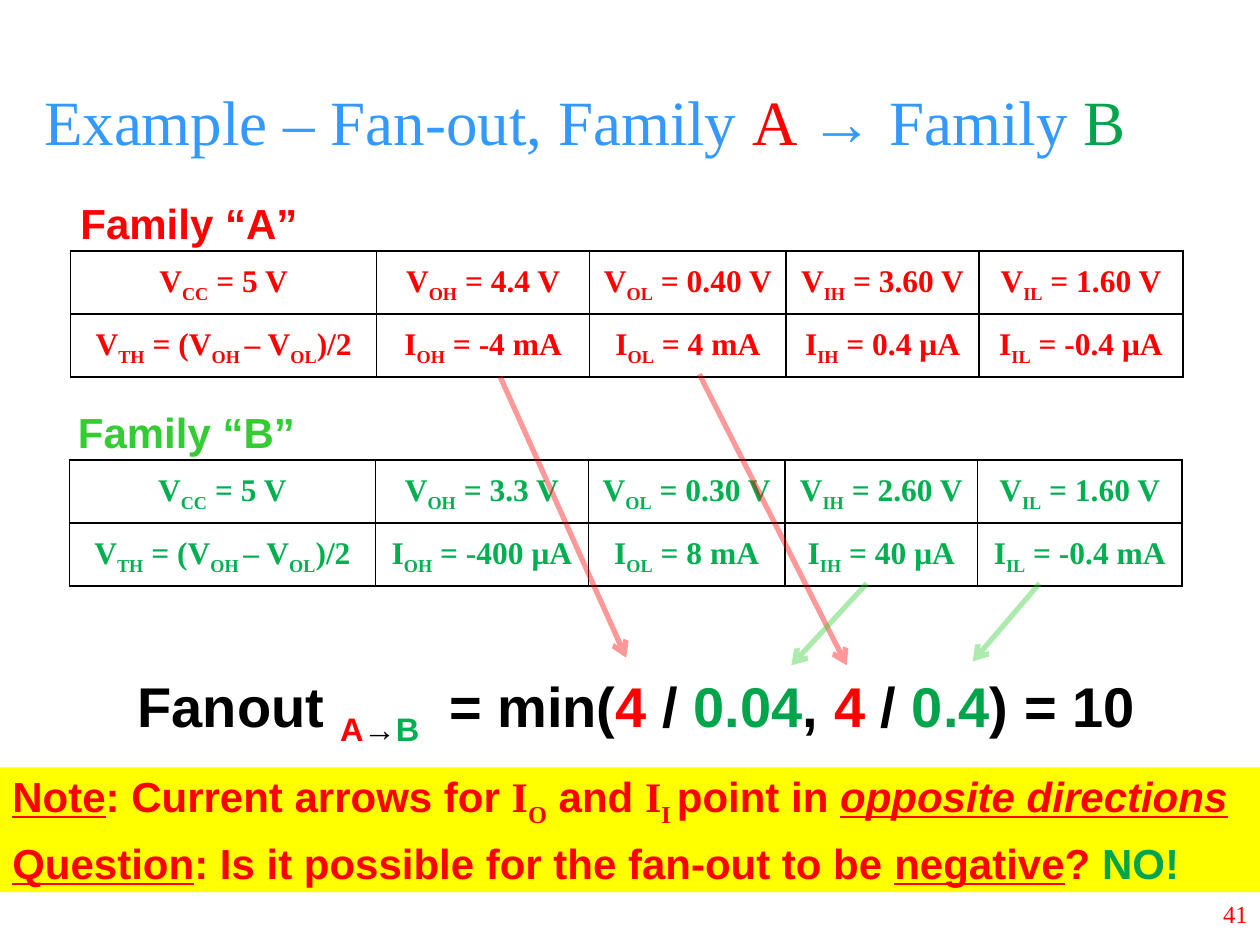
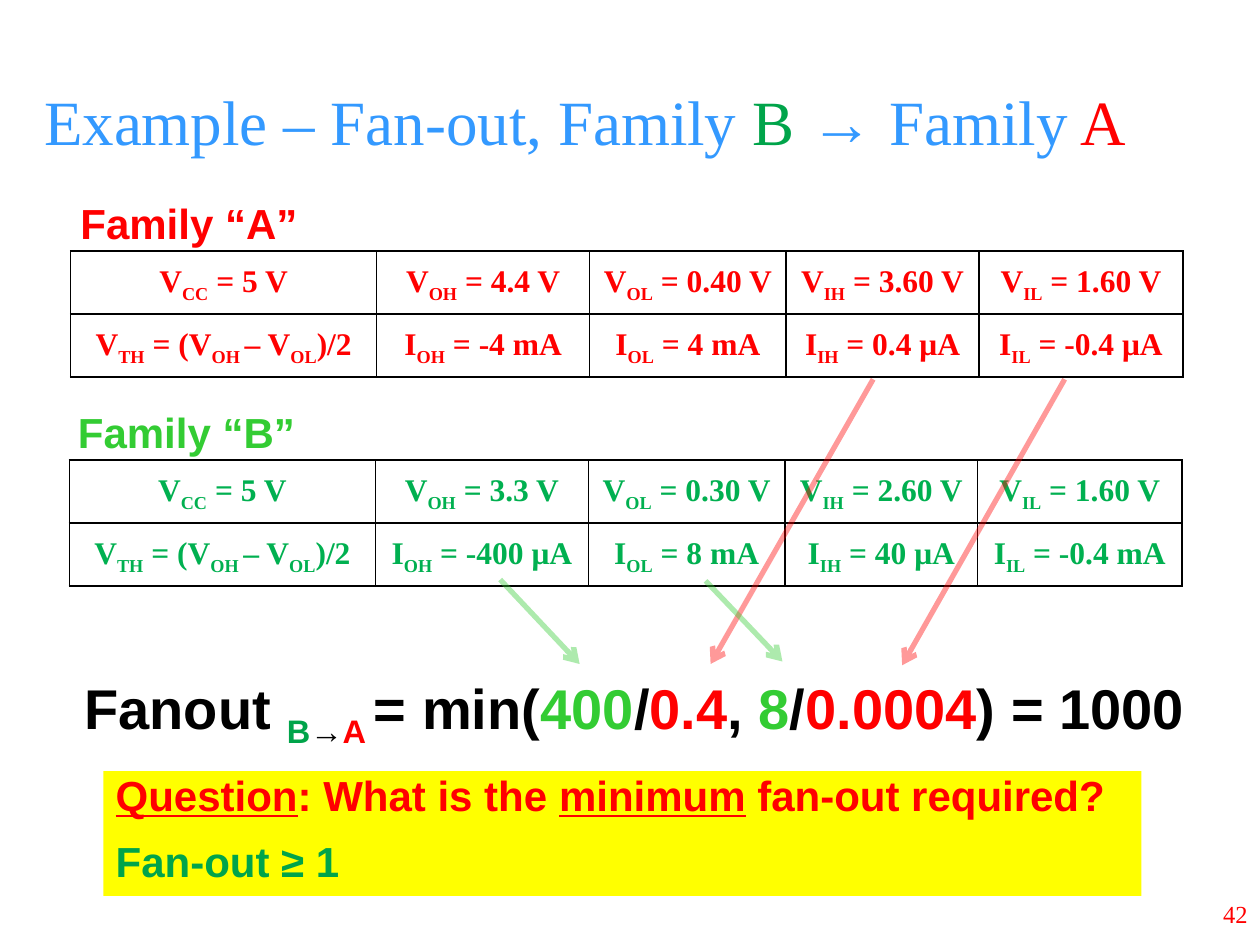
"""Build two slides on the fan-out between logic families A and B."""
from lxml import etree
from pptx import Presentation
from pptx import util as u
from pptx.dml import color
from pptx.enum import shapes, text
from pptx.oxml import ns

COLORS = {
    "title": "3399FF", "red": "FF0000", "green": "00A44A", "lime": "33CC33",
    "leaf": "00B050", "black": "000000", "yellow": "FFFF00",
}
SERIF, SANS = "Times New Roman", "Arial"
TITLE_ONLY = 5
COLUMN_WIDTHS = [2.43, 1.69, 1.56, 1.53, 1.62]
ROW_HEIGHT = 0.5
THRESHOLD = "V_TH_ = (V_OH _– V_OL_)/2"
FAMILY_A = [
    ["V_CC_ = 5 V", "V_OH_ = 4.4 V", "V_OL_ = 0.40 V", "V_IH_ = 3.60 V", "V_IL_ = 1.60 V"],
    [THRESHOLD, "I_OH_ = -4 mA", "I_OL_ = 4 mA", "I_IH_ = 0.4 μA", "I_IL_ = -0.4 μA"],
]
FAMILY_B = [
    ["V_CC_ = 5 V", "V_OH_ = 3.3 V", "V_OL_ = 0.30 V", "V_IH_ = 2.60 V", "V_IL_ = 1.60 V"],
    [THRESHOLD, "I_OH_ = -400 μA", "I_OL_ = 8 mA", "I_IH_ = 40 μA", "I_IL_ = -0.4 mA"],
]
RED, GREEN, LIME, LEAF = ({"ink": name} for name in ("red", "green", "lime", "leaf"))
UNDERLINED, SYMBOL = {"underline": True}, {"font": SERIF}


def rgb(name):
    """Return the named colour."""
    return color.RGBColor.from_string(COLORS[name])


def box(left, top, width, height):
    """Return a position and size in inches."""
    return [u.Inches(value) for value in (left, top, width, height)]


def add_child(parent, tag, **attributes):
    """Append a drawing element and return it."""
    return etree.SubElement(parent, ns.qn(tag), attributes)


def write_run(paragraph, content, font=SANS, size=24, ink="black", bold=True,
              italic=False, underline=False, tracking=0):
    """Add formatted text, where underscores enclose subscripts."""
    for index, piece in enumerate(content.split("_")):
        if not piece:
            continue
        run = paragraph.add_run()
        run.text = piece
        run.font.name, run.font.size = font, u.Pt(size)
        run.font.bold, run.font.italic, run.font.underline = bold, italic, underline
        run.font.color.rgb = rgb(ink)
        properties = run.font._element
        if index % 2:
            properties.set("baseline", "-25000")
        if tracking:
            properties.set("spc", str(tracking * 100))


def write_line(paragraph, parts, align=text.PP_ALIGN.LEFT, spacing=0.85, before=0,
               after=0, **style):
    """Fill a paragraph from strings and (string, format) pairs."""
    paragraph.alignment = align
    paragraph.line_spacing = spacing
    paragraph.space_before, paragraph.space_after = u.Pt(before), u.Pt(after)
    for part in parts:
        content, changes = (part, {}) if isinstance(part, str) else part
        write_run(paragraph, content, **{**style, **changes})


def add_label(slide, place, parts, **style):
    """Add a wrapped text box of one line."""
    frame = slide.shapes.add_textbox(*box(*place)).text_frame
    frame.word_wrap = True
    frame.auto_size = text.MSO_AUTO_SIZE.SHAPE_TO_FIT_TEXT
    write_line(frame.paragraphs[0], parts, **style)


def add_title(slide, parts):
    """Place and fill the title."""
    title = slide.shapes.title
    title.left, title.top, title.width, title.height = box(0, 0.33, 10, 1.25)
    frame = title.text_frame
    frame.auto_size = text.MSO_AUTO_SIZE.NONE
    frame.vertical_anchor = text.MSO_ANCHOR.MIDDLE
    frame.margin_left = u.Inches(0.35)
    write_line(frame.paragraphs[0], parts, spacing=1, font=SERIF, size=36,
               ink="title", bold=False)


def add_page_number(slide, number):
    """Write the page number in the lower right corner."""
    frame = slide.shapes.add_textbox(*box(7.92, 7, 2.08, 0.5)).text_frame
    frame.word_wrap = True
    frame.vertical_anchor = text.MSO_ANCHOR.MIDDLE
    write_line(frame.paragraphs[0], [str(number)], align=text.PP_ALIGN.RIGHT, spacing=1,
               font=SERIF, size=14, ink="red", bold=False)


def add_borders(cell):
    """Draw a thin black line on each side of a cell."""
    properties = cell._tc.get_or_add_tcPr()
    for index, side in enumerate("LRTB"):
        border = add_child(properties, f"a:ln{side}", w=str(u.Pt(1)))
        add_child(add_child(border, "a:solidFill"), "a:srgbClr", val=COLORS["black"])
        properties.insert(index, border)


def add_ratings(slide, left, top, ratings, ink):
    """Add the table of a family's voltages and currents."""
    place = box(left, top, sum(COLUMN_WIDTHS), ROW_HEIGHT * len(ratings))
    table = slide.shapes.add_table(len(ratings), len(COLUMN_WIDTHS), *place).table
    table.first_row = table.horz_banding = False
    for column, width in zip(table.columns, COLUMN_WIDTHS):
        column.width = u.Inches(width)
    for row, values in zip(table.rows, ratings):
        row.height = u.Inches(ROW_HEIGHT)
        for cell, value in zip(row.cells, values):
            cell.fill.background()
            cell.vertical_anchor = text.MSO_ANCHOR.MIDDLE
            cell.margin_left = cell.margin_right = u.Inches(0.07)
            cell.margin_top = cell.margin_bottom = 0
            write_line(cell.text_frame.paragraphs[0], [value], align=text.PP_ALIGN.CENTER,
                       before=4, after=4, font=SERIF, size=18, ink=ink)
            add_borders(cell)


def add_arrow(slide, ink, start, end):
    """Draw a translucent arrow from a rating to its place in the formula."""
    arrow = slide.shapes.add_connector(
        shapes.MSO_CONNECTOR.STRAIGHT, *[u.Inches(value) for value in start + end])
    arrow.line.color.rgb = rgb(ink)
    arrow.line.width = u.Pt(3)
    add_child(arrow._element.xpath(".//a:srgbClr")[0], "a:alpha", val="40000")
    add_child(arrow.line._get_or_add_ln(), "a:tailEnd", type="arrow")
    add_child(arrow._element.spPr, "a:effectLst")


def add_note(slide, place, lines):
    """Add the yellow band with its remarks."""
    band = slide.shapes.add_shape(shapes.MSO_SHAPE.RECTANGLE, *box(*place))
    band.shadow.inherit = False
    band.fill.solid()
    band.fill.fore_color.rgb = rgb("yellow")
    band.line.fill.background()
    frame = band.text_frame
    frame.word_wrap = True
    frame.vertical_anchor = text.MSO_ANCHOR.TOP
    for index, parts in enumerate(lines):
        paragraph = frame.add_paragraph() if index else frame.paragraphs[0]
        write_line(paragraph, parts, before=13 if index else 0, ink="red")


def add_example(deck, number, title, formula_place, formula, arrows, note_place, note):
    """Add a slide that works out the fan-out in one direction."""
    slide = deck.slides.add_slide(deck.slide_layouts[TITLE_ONLY])
    add_title(slide, title)
    add_page_number(slide, number)
    add_ratings(slide, 0.56, 1.99, FAMILY_A, "red")
    add_ratings(slide, 0.55, 3.65, FAMILY_B, "leaf")
    add_label(slide, (0.54, 1.58, 2.84, 0.44), ["Family “A”"], ink="red")
    add_label(slide, (0.52, 3.24, 2.84, 0.44), ["Family “B”"], ink="lime")
    add_label(slide, formula_place, formula, align=text.PP_ALIGN.CENTER, size=32)
    for arrow in arrows:
        add_arrow(slide, *arrow)
    add_note(slide, note_place, note)


def main():
    """Build and save the deck."""
    deck = Presentation()
    deck.slide_width, deck.slide_height = u.Inches(10), u.Inches(7.5)
    add_example(
        deck, 41,
        ["Example – Fan-out, Family ", ("A ", RED), "→ Family ", ("B", GREEN)],
        (0.73, 5.31, 8.64, 0.56),
        ["Fanout ", ("_A_", RED), "_→_", ("_B_", LEAF), ("_ _", {"tracking": 12}),
         "= min(", ("4", RED), " / ", ("0.04", GREEN), ", ", ("4", RED), " / ",
         ("0.4", GREEN), ") = 10"],
        [("red", (3.97, 2.99), (4.97, 5.22)), ("red", (5.55, 2.97), (6.72, 5.28)),
         ("lime", (6.88, 4.63), (6.28, 5.28)), ("lime", (8.25, 4.63), (7.72, 5.25))],
        (0, 6.09, 10, 0.99),
        [[("Note", UNDERLINED), ": Current arrows for ", ("I_O_", SYMBOL), " and ",
          ("I_I _", SYMBOL), "point in ",
          ("opposite directions", {"italic": True, "underline": True})],
         [("Question", UNDERLINED), ": Is it possible for the fan-out to be ",
          ("negative", UNDERLINED), "? ", ("NO!", GREEN)]])
    add_example(
        deck, 42,
        ["Example – Fan-out, Family ", ("B ", GREEN), "→ Family", (" A", RED)],
        (0.4, 5.33, 9.27, 0.56),
        ["Fanout ", ("_B_", GREEN), "_→_", ("_A _", RED), "= min(", ("400", LIME), "/",
         ("0.4", RED), ", ", ("8", LIME), "/", ("0.0004", RED), ") = 1000"],
        [("red", (8.45, 3.01), (7.16, 5.28)), ("red", (6.93, 3.01), (5.64, 5.27)),
         ("lime", (3.97, 4.6), (4.6, 5.27)), ("lime", (5.6, 4.61), (6.21, 5.25))],
        (0.82, 6.12, 8.24, 0.99),
        [[("Question", UNDERLINED), ": What is the ", ("minimum", UNDERLINED),
          " fan-out required?"],
         [("Fan-out ≥ 1", GREEN)]])
    deck.save("out.pptx")


if __name__ == "__main__":
    main()
